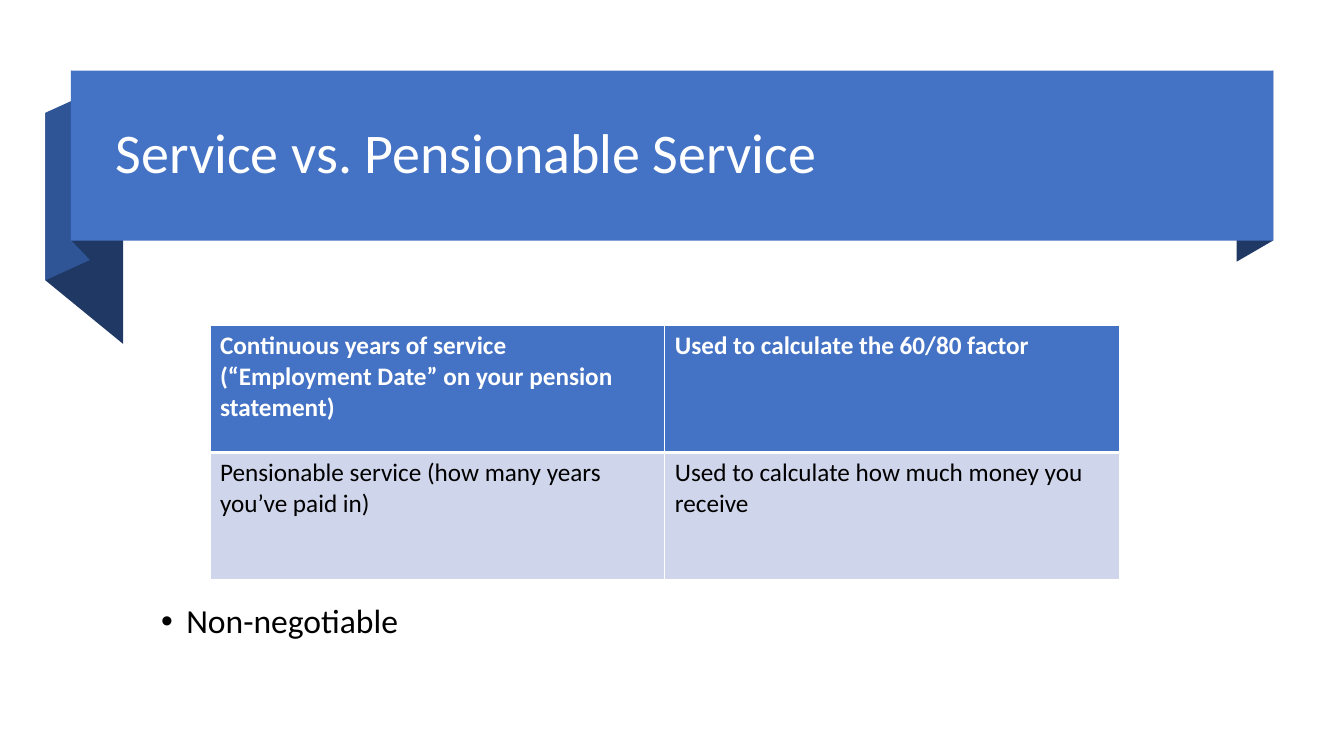
from lxml.etree import SubElement
from pptx import Presentation
from pptx.dml.color import RGBColor
from pptx.enum.shapes import MSO_SHAPE
from pptx.enum.text import MSO_ANCHOR, PP_ALIGN
from pptx.oxml.ns import qn
from pptx.util import Pt

# Content
TITLE = "Service vs. Pensionable Service"
SERVICE_ROWS = [
    ("Continuous years of service (“Employment Date” on your pension statement)",
     "Used to calculate the 60/80 factor"),
    ("Pensionable service (how many years you’ve paid in)",
     "Used to calculate how much money you receive"),
]
REMARK = "Non-negotiable"

# Formats
BLUE, MID_BLUE, NAVY, PALE = "4472C4", "2F5597", "203864", "CFD5EA"
WHITE, BLACK = "FFFFFF", "000000"
TITLE_FONT = {"name": "Calibri", "size": Pt(40), "bold": False}
REMARK_FONT = {"name": "Calibri", "size": Pt(24), "bold": False}
ROW_STYLES = [
    {"fill": BLUE, "color": WHITE, "bold": True, "top": 1, "bottom": 3},
    {"fill": PALE, "color": BLACK, "bold": False, "top": 3, "bottom": 1},
]

# Ribbon folds: left, right, top at left, top at right, height, colour
FOLDS = [
    (32.4, 87.9, 80.6, 126, 119.6, NAVY),
    (32.4, 64.1, 80.6, 66.2, 119.6, MID_BLUE),
    (51.1, 64.1, 50.4, 64, 121.5, NAVY),
    (883.4, 909.4, 65.5, 50.4, 121.4, NAVY),
]
BANNER = (50.7, 50.4, 858.8, 121.5)
TITLE_BOX = (75.6, 63.4, 808.6, 95.8)
REMARK_BOX = (108, 423, 764.6, 44)
TABLE_LEFT, TABLE_TOP, COLUMN_WIDTH, ROW_HEIGHT = 150, 232.6, 324.9, 90.6


def paint(target, color):
    target.solid()
    target.fore_color.rgb = RGBColor.from_string(color)


def finish(shape, color):
    shape.shadow.inherit = False
    paint(shape.fill, color)
    shape.line.fill.background()


def apply(target, formats):
    for name, value in formats.items():
        setattr(target, name, value)


def write(frame, text, font, color):
    paragraph = frame.paragraphs[0]
    paragraph.alignment = PP_ALIGN.LEFT
    run = paragraph.add_run()
    run.text = text
    apply(run.font, font)
    paint(run.font.fill, color)
    return paragraph


def add_text(slide, box, text, font, color):
    frame = slide.shapes.add_textbox(*map(Pt, box)).text_frame
    apply(frame, {"word_wrap": True, "vertical_anchor": MSO_ANCHOR.MIDDLE})
    paragraph = write(frame, text, font, color)
    paragraph.line_spacing = 0.9
    return paragraph


def add_border(cell, side, width):
    line = SubElement(cell._tc.get_or_add_tcPr(), qn("a:" + side), w=str(Pt(width)))
    fill = SubElement(line, qn("a:solidFill"))
    SubElement(fill, qn("a:srgbClr"), val=WHITE)


def add_ribbon(slide):
    for left, right, left_top, right_top, height, color in FOLDS:
        corners = [(left, left_top), (right, right_top),
                   (right, right_top + height), (left, left_top + height)]
        points = [(Pt(x), Pt(y)) for x, y in corners]
        outline = slide.shapes.build_freeform(*points[0])
        outline.add_line_segments(points[1:], close=True)
        finish(outline.convert_to_shape(), color)
    banner = slide.shapes.add_shape(MSO_SHAPE.RECTANGLE, *map(Pt, BANNER))
    finish(banner, BLUE)


def add_service_table(slide):
    row_count, column_count = len(SERVICE_ROWS), len(SERVICE_ROWS[0])
    table = slide.shapes.add_table(
        row_count, column_count, Pt(TABLE_LEFT), Pt(TABLE_TOP),
        Pt(COLUMN_WIDTH * column_count), Pt(ROW_HEIGHT * row_count)).table
    for r, (texts, style) in enumerate(zip(SERVICE_ROWS, ROW_STYLES)):
        font = {"name": "Calibri", "size": Pt(18), "bold": style["bold"]}
        for c, text in enumerate(texts):
            cell = table.cell(r, c)
            write(cell.text_frame, text, font, style["color"])
            # Borders precede the fill in the cell properties
            for side, width in (("lnL", 1), ("lnR", 1),
                                ("lnT", style["top"]), ("lnB", style["bottom"])):
                add_border(cell, side, width)
            paint(cell.fill, style["fill"])


def add_remark(slide):
    paragraph = add_text(slide, REMARK_BOX, REMARK, REMARK_FONT, BLACK)
    properties = paragraph._p.get_or_add_pPr()
    properties.set("marL", str(Pt(18)))
    properties.set("indent", str(-Pt(18)))
    SubElement(properties, qn("a:buFont"), typeface="Arial")
    SubElement(properties, qn("a:buChar"), char="•")


def main():
    deck = Presentation()
    apply(deck, {"slide_width": Pt(960), "slide_height": Pt(540)})
    slide = deck.slides.add_slide(deck.slide_layouts[6])
    add_ribbon(slide)
    add_text(slide, TITLE_BOX, TITLE, TITLE_FONT, WHITE)
    add_remark(slide)
    add_service_table(slide)
    deck.save("out.pptx")


if __name__ == "__main__":
    main()
